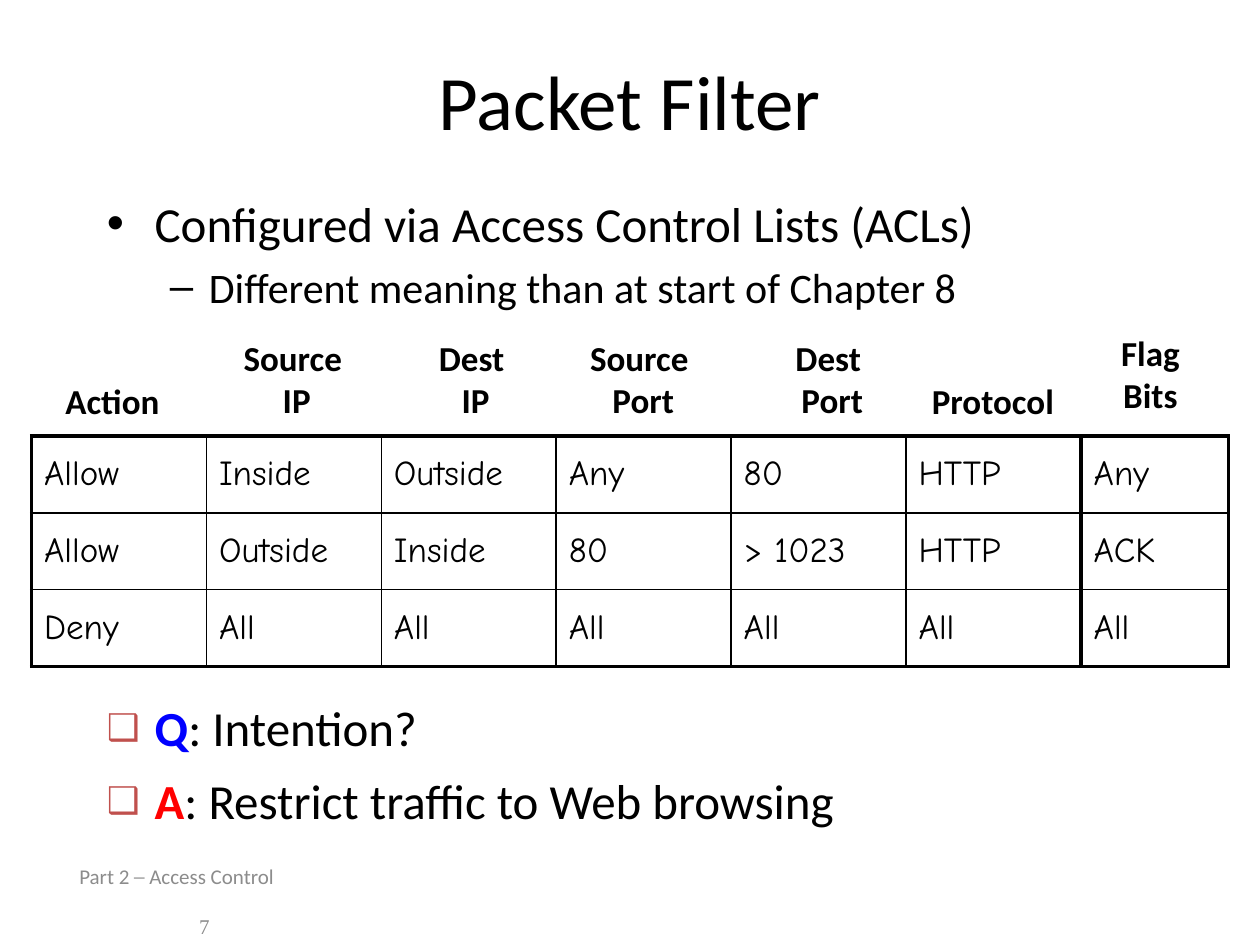
from lxml.etree import SubElement
from pptx import Presentation
from pptx.dml.color import RGBColor
from pptx.enum.text import MSO_ANCHOR as Anchor, PP_ALIGN as Align
from pptx.oxml.ns import qn
from pptx.util import Inches, Pt

COLORS = {"text": "000000", "question": "0000FF", "answer": "FF0000",
          "box_bullet": "C0504D", "footer": "8C8C8C"}

presentation = Presentation()
presentation.slide_width, presentation.slide_height = Inches(10), Inches(7.5)
slide = presentation.slides.add_slide(presentation.slide_layouts[6])


def add_text(left, top, width, height, lines, size, color="text", bold=False,
             align=Align.LEFT, anchor=Anchor.TOP):
    """Add a text box with one paragraph per line and return its text frame."""
    box = slide.shapes.add_textbox(Inches(left), Inches(top), Inches(width), Inches(height))
    frame = box.text_frame
    frame.word_wrap = True
    frame.vertical_anchor = anchor
    frame.text = "\n".join(lines)
    for paragraph in frame.paragraphs:
        paragraph.alignment = align
        for run in paragraph.runs:
            run.font.name = "Calibri"
            run.font.size = Pt(size)
            run.font.bold = bold
            run.font.color.rgb = RGBColor.from_string(COLORS[color])
    return frame


def add_bullet(paragraph, character, margin, indent, spacing, color=None):
    """Give a paragraph a hanging bullet; a coloured one is drawn at 75 %."""
    properties = paragraph._p.get_or_add_pPr()
    properties.set("marL", str(Inches(margin)))
    properties.set("indent", str(Inches(-indent)))
    paragraph.line_spacing = spacing
    paragraph.space_after = Pt(6)
    if color:
        bullet_color = SubElement(properties, qn("a:buClr"))
        SubElement(bullet_color, qn("a:srgbClr"), val=COLORS[color])
        SubElement(properties, qn("a:buSzPct"), val="75000")
    SubElement(properties, qn("a:buFont"), typeface="Arial")
    SubElement(properties, qn("a:buChar"), char=character)


# Footer with slide number
footer = add_text(0.5, 6.95, 2.33, 0.4, ["Part 2 ─ Access Control", "7"], 12,
                  "footer", anchor=Anchor.MIDDLE)
footer.margin_left = Inches(0.13)
number = footer.paragraphs[1]
number.space_before = Pt(14)
number._p.get_or_add_pPr().set("marL", str(Inches(0.95)))
number.runs[0].font.name = "Times New Roman"

# Title
add_text(0.75, 0.33, 8.5, 0.92, ["Packet Filter"], 44, align=Align.CENTER, anchor=Anchor.MIDDLE)

# Introduction
body = add_text(0.75, 1.58, 8.67, 1.08,
                ["Configured via Access Control Lists (ACLs)",
                 "Different meaning than at start of Chapter 8"], 28)
main_point, sub_point = body.paragraphs
add_bullet(main_point, "•", 0.38, 0.38, 0.8)
sub_point.level = 1
add_bullet(sub_point, "–", 0.81, 0.31, 0.8)
sub_point.space_before = Pt(4.8)
sub_point.runs[0].font.size = Pt(24)

# Rule tables: left, column width, rows
rule_tables = [
    (0.25, 8.33 / 6, [["Allow", "Inside", "Outside", "Any", "80", "HTTP"],
                      ["Allow", "Outside", "Inside", "80", "> 1023", "HTTP"],
                      ["Deny", "All", "All", "All", "All", "All"]]),
    (8.58, 1.17, [["Any"], ["ACK"], ["All"]]),
]
for left, column_width, rows in rule_tables:
    row_count, column_count = len(rows), len(rows[0])
    frame = slide.shapes.add_table(row_count, column_count, Inches(left), Inches(3.46),
                                   Inches(column_width * column_count), Inches(1.83))
    table = frame.table
    table.first_row = table.horz_banding = False
    for column in table.columns:
        column.width = Inches(column_width)
    for i, row in enumerate(rows):
        for j, value in enumerate(row):
            cell = table.cell(i, j)
            cell.text = value
            cell.vertical_anchor = Anchor.MIDDLE
            font = cell.text_frame.paragraphs[0].runs[0].font
            font.name, font.size = "Comic Neue", Pt(20)
            font.color.rgb = RGBColor.from_string(COLORS["text"])
            # Thick outer edge, thin inner lines
            properties = cell._tc.get_or_add_tcPr()
            edges = {"lnL": j == 0, "lnR": j == column_count - 1,
                     "lnT": i == 0, "lnB": i == row_count - 1}
            for edge, outer in edges.items():
                line = SubElement(properties, qn(f"a:{edge}"), w=str(Pt(2.25 if outer else 1)))
                fill = SubElement(line, qn("a:solidFill"))
                SubElement(fill, qn("a:srgbClr"), val=COLORS["text"])
            cell.fill.background()

# Column headings: left, top, width, lines
headings = [
    (0.42, 2.96, 1.05, ["Action"]),
    (1.75, 2.62, 1.21, ["Source ", "IP"]),
    (3.17, 2.62, 1.21, ["Dest ", "IP"]),
    (4.5, 2.62, 1.21, ["Source ", "Port"]),
    (6, 2.62, 1.21, ["Dest ", "Port"]),
    (7.17, 2.96, 1.42, ["Protocol"]),
    (8.42, 2.58, 1.42, ["Flag", "Bits"]),
]
for left, top, width, lines in headings:
    align = Align.LEFT if lines == ["Action"] else Align.CENTER
    add_text(left, top, width, 0.1 + 0.39 * len(lines), lines, 20, bold=True, align=align)

# Question and answer
discussion = add_text(0.75, 5.54, 8.5, 1.17, ["Q", "A"], 28, bold=True)
replies = [("question", ": Intention?"), ("answer", ": Restrict traffic to Web browsing")]
for paragraph, (color, reply) in zip(discussion.paragraphs, replies):
    add_bullet(paragraph, "❑", 0.38, 0.38, 0.9, "box_bullet")
    paragraph.runs[0].font.color.rgb = RGBColor.from_string(COLORS[color])
    run = paragraph.add_run()
    run.text = reply
    run.font.name, run.font.size = "Calibri", Pt(28)
    run.font.color.rgb = RGBColor.from_string(COLORS["text"])
discussion.paragraphs[1].space_before = Pt(5.6)

presentation.save("out.pptx")
